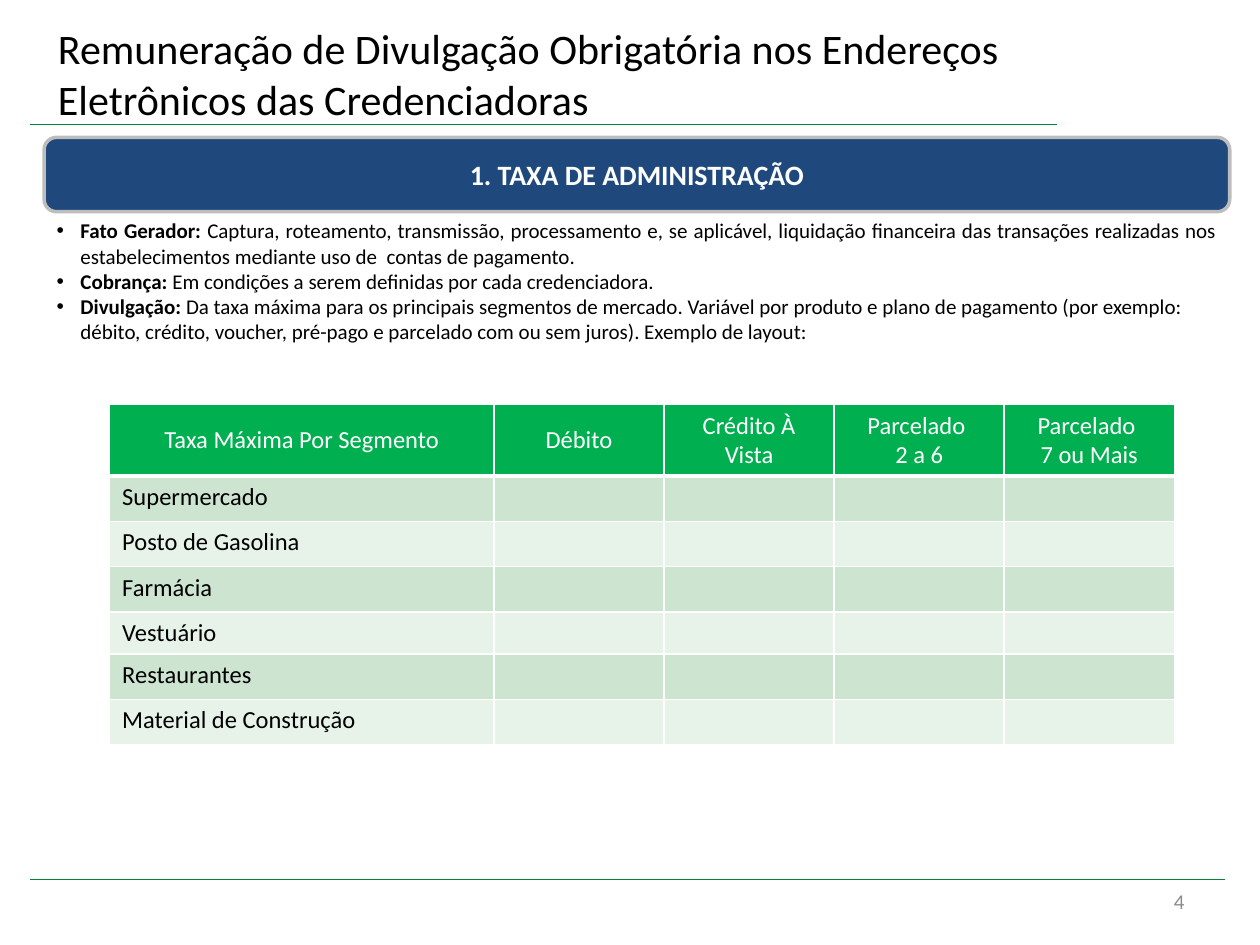
from lxml import etree
from pptx import Presentation
from pptx.dml.color import RGBColor
from pptx.enum.shapes import MSO_CONNECTOR, MSO_SHAPE
from pptx.enum.text import MSO_ANCHOR, PP_ALIGN
from pptx.oxml.ns import qn
from pptx.util import Inches, Pt

MIDDLE, TOP = MSO_ANCHOR.MIDDLE, MSO_ANCHOR.TOP
LEFT, CENTER = PP_ALIGN.LEFT, PP_ALIGN.CENTER
RIGHT, JUSTIFY = PP_ALIGN.RIGHT, PP_ALIGN.JUSTIFY
STRAIGHT, ROUNDED = MSO_CONNECTOR.STRAIGHT, MSO_SHAPE.ROUNDED_RECTANGLE

FONT = "Calibri"
COLORS = {
    "black": "000000", "white": "FFFFFF", "gray": "8C8C8C", "rule": "00843C",
    "banner": "1F497D", "banner_edge": "BDBDBD", "header": "00B050",
    "band_dark": "CCE4D0", "band_light": "E7F2E9",
}

TITLE = "Remuneração de Divulgação Obrigatória nos Endereços Eletrônicos das Credenciadoras"
BANNER = "1. TAXA DE ADMINISTRAÇÃO"
PAGE_NUMBER = "4"
BULLETS = [
    ("Fato Gerador: ",
     "Captura, roteamento, transmissão, processamento e, se aplicável, liquidação financeira "
     "das transações realizadas nos estabelecimentos mediante uso de  contas de pagamento.",
     JUSTIFY, 0),
    ("Cobrança: ", "Em condições a serem definidas por cada credenciadora.", JUSTIFY, 1),
    ("Divulgação: ",
     "Da taxa máxima para os principais segmentos de mercado. Variável por produto e plano de "
     "pagamento (por exemplo: débito, crédito, voucher, pré-pago e parcelado com ou sem juros). "
     "Exemplo de layout:",
     LEFT, 1),
]
HEADERS = [["Taxa Máxima Por Segmento"], ["Débito"], ["Crédito À Vista"],
           ["Parcelado ", "2 a 6"], ["Parcelado ", "7 ou Mais"]]
SEGMENTS = ["Supermercado", "Posto de Gasolina", "Farmácia", "Vestuário",
            "Restaurantes", "Material de Construção"]
COLUMN_WIDTHS = [3.05] + [1.35] * 4
ROW_HEIGHTS = [0.39, 0.36, 0.36, 0.36, 0.29, 0.36, 0.36]
RULES = [(0.99, 8.39), (6.98, 9.72)]
RULE_LEFT = 0.24


def rgb(name):
    return RGBColor.from_string(COLORS[name])


def add_span(para, text, size, color, bold=False):
    span = para.add_run()
    span.text = text
    span.font.name = FONT
    span.font.size = Pt(size)
    span.font.bold = bold
    span.font.color.rgb = rgb(color)


def add_box(page, left, top, width, height, anchor):
    box = page.shapes.add_textbox(Inches(left), Inches(top), Inches(width), Inches(height))
    box.text_frame.word_wrap = True
    box.text_frame.vertical_anchor = anchor
    return box.text_frame


def next_para(frame, index):
    return frame.add_paragraph() if index else frame.paragraphs[0]


def add_rule(page, y, right):
    rule = page.shapes.add_connector(STRAIGHT, Inches(RULE_LEFT), Inches(y), Inches(right), Inches(y))
    rule.line.color.rgb = rgb("rule")
    rule.line.width = Pt(0.75)
    etree.SubElement(rule._element.spPr, qn("a:effectLst"))


def add_bullet(para):
    props = para._p.get_or_add_pPr()
    props.set("marL", str(Inches(0.19)))
    props.set("indent", str(-Inches(0.19)))
    etree.SubElement(props, qn("a:buFont"), typeface="Arial")
    etree.SubElement(props, qn("a:buChar"), char="•")
    if para.level:
        tabs = etree.SubElement(props, qn("a:tabLst"))
        etree.SubElement(tabs, qn("a:tab"), pos=str(Inches(0.3)), algn="l")


def style_cell(cell, fill, bottom_width):
    props = cell._tc.get_or_add_tcPr()
    for side, width in (("L", 1), ("R", 1), ("T", 1), ("B", bottom_width)):
        line = etree.SubElement(props, qn("a:ln" + side), w=str(Pt(width)))
        solid = etree.SubElement(line, qn("a:solidFill"))
        etree.SubElement(solid, qn("a:srgbClr"), val=COLORS["white"])
    cell.fill.solid()
    cell.fill.fore_color.rgb = rgb(fill)


def add_rate_table(page):
    rows = [HEADERS] + [[[name]] + [[]] * (len(HEADERS) - 1) for name in SEGMENTS]
    table = page.shapes.add_table(
        len(rows), len(HEADERS), Inches(0.87), Inches(3.21),
        Inches(sum(COLUMN_WIDTHS)), Inches(sum(ROW_HEIGHTS))).table
    for column, width in zip(table.columns, COLUMN_WIDTHS):
        column.width = Inches(width)
    for r, (row, height) in enumerate(zip(rows, ROW_HEIGHTS)):
        table.rows[r].height = Inches(height)
        is_header = r == 0
        fill = "header" if is_header else ("band_dark" if r % 2 else "band_light")
        for c, lines in enumerate(row):
            cell = table.cell(r, c)
            style_cell(cell, fill, 3 if is_header else 1)
            cell.vertical_anchor = MIDDLE if is_header else TOP
            for index, text in enumerate(lines):
                para = next_para(cell.text_frame, index)
                para.alignment = CENTER if is_header else LEFT
                add_span(para, text, 14, "white" if is_header else "black")
            if not lines:
                etree.SubElement(cell.text_frame.paragraphs[0]._p, qn("a:endParaRPr"), sz="1400")


def main():
    deck = Presentation()
    deck.slide_width, deck.slide_height = Inches(10), Inches(7.5)
    page = deck.slides.add_slide(deck.slide_layouts[6])

    for y, right in RULES:
        add_rule(page, y, right)

    number = add_box(page, 7.17, 6.95, 2.33, 0.4, MIDDLE).paragraphs[0]
    number.alignment = RIGHT
    add_span(number, PAGE_NUMBER, 12, "gray")

    banner = page.shapes.add_shape(ROUNDED, Inches(0.35), Inches(1.09), Inches(9.41), Inches(0.59))
    banner.shadow.inherit = False
    banner.fill.solid()
    banner.fill.fore_color.rgb = rgb("banner")
    banner.line.color.rgb = rgb("banner_edge")
    banner.line.width = Pt(2)
    banner.text_frame.vertical_anchor = MIDDLE
    banner_para = banner.text_frame.paragraphs[0]
    banner_para.alignment = CENTER
    add_span(banner_para, BANNER, 16, "white", True)

    title = add_box(page, 0.42, 0.29, 7.91, 0.58, MIDDLE)
    title.margin_left = title.margin_right = Inches(0.04)
    title.margin_top = title.margin_bottom = Inches(0.04)
    add_span(title.paragraphs[0], TITLE, 24, "black")

    notes = add_box(page, 0.35, 1.68, 9.41, 1.11, TOP)
    for index, (label, text, alignment, level) in enumerate(BULLETS):
        para = next_para(notes, index)
        para.alignment = alignment
        para.level = level
        add_bullet(para)
        add_span(para, label, 12, "black", True)
        add_span(para, text, 12, "black")

    add_rate_table(page)
    deck.save("out.pptx")


if __name__ == "__main__":
    main()
